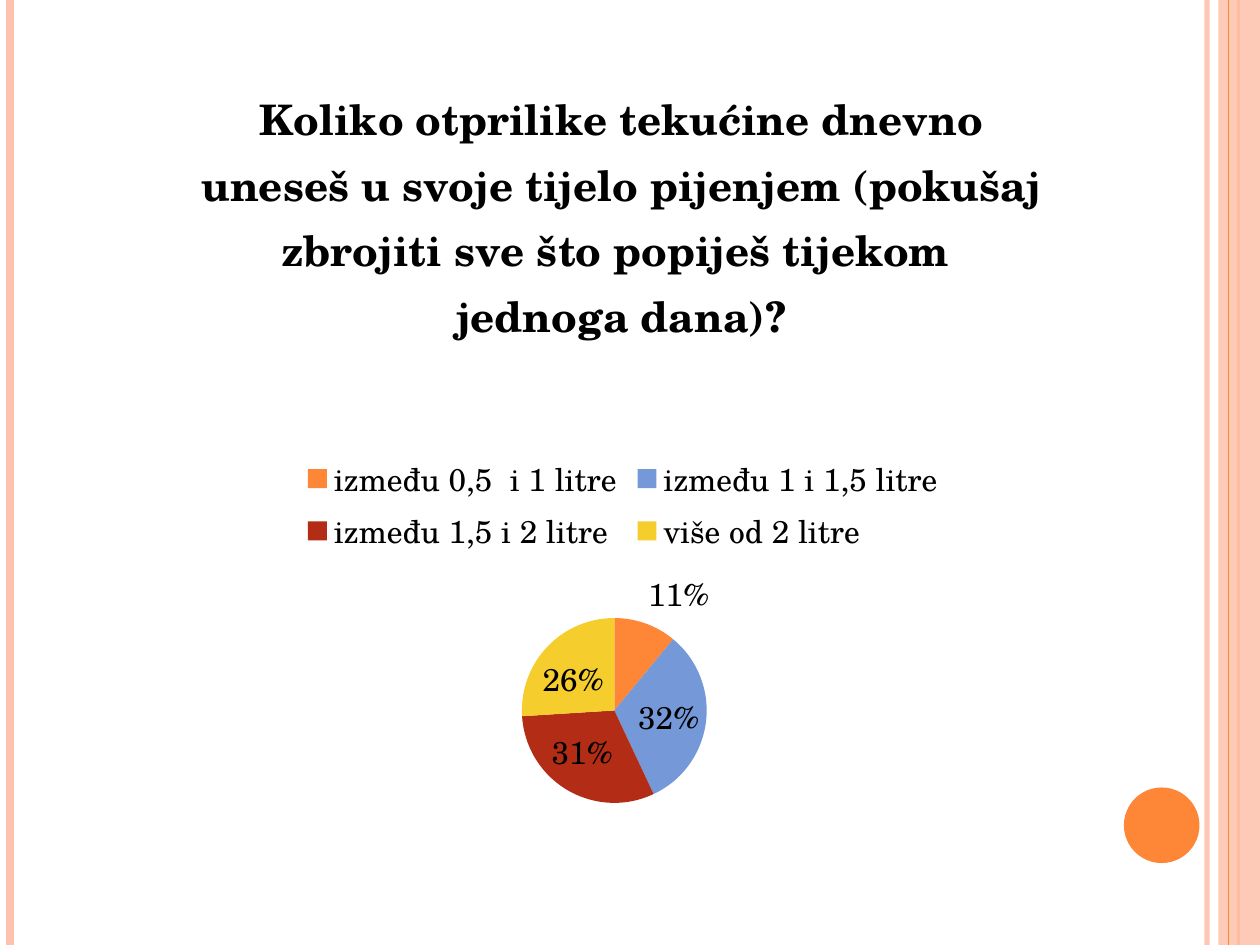
from lxml import etree
from pptx import Presentation
from pptx.chart.data import CategoryChartData
from pptx.dml.color import RGBColor
from pptx.enum.chart import XL_CHART_TYPE, XL_LABEL_POSITION, XL_LEGEND_POSITION
from pptx.enum.shapes import MSO_CONNECTOR, MSO_SHAPE
from pptx.oxml.ns import qn
from pptx.util import Inches, Pt

FONT = "TeX Gyre Schola"
PEACH = "FEC3AE"
ORANGE = "FE8637"
QUESTION = [
    "Koliko otprilike tekućine dnevno uneseš u svoje tijelo pijenjem (pokušaj zbrojiti sve što popiješ tijekom ",
    "jednoga dana)?",
]
ANSWERS = [
    ("između 0,5  i 1 litre", 11, ORANGE),
    ("između 1 i 1,5 litre", 32, "7598D9"),
    ("između 1,5 i 2 litre", 31, "B32C16"),
    ("više od 2 litre", 26, "F5CD2D"),
]


def color(hex_value):
    return RGBColor.from_string(hex_value)


def set_opacity(shape, percent):
    for tint in shape._element.spPr.iter(qn("a:srgbClr")):
        etree.SubElement(tint, qn("a:alpha")).set("val", str(percent * 1000))


def add_stripe(slide, x, top, height, hex_value, weight):
    stripe = slide.shapes.add_connector(
        MSO_CONNECTOR.STRAIGHT, Inches(x), Inches(top), Inches(x), Inches(top + height))
    stripe.line.color.rgb = color(hex_value)
    stripe.line.width = Pt(weight)
    etree.SubElement(stripe._element.spPr, qn("a:effectLst"))
    return stripe


def add_solid(slide, kind, left, top, width, height, hex_value):
    solid = slide.shapes.add_shape(
        kind, Inches(left), Inches(top), Inches(width), Inches(height))
    solid.shadow.inherit = False
    solid.fill.solid()
    solid.fill.fore_color.rgb = color(hex_value)
    solid.line.fill.background()
    return solid


def add_frame(slide, left, top, width, height):
    right = left + width
    set_opacity(add_stripe(slide, right - 0.42, top, height, PEACH, 3), 93)
    add_stripe(slide, left + 0.08, top, height, PEACH, 4.5)
    add_stripe(slide, right - 0.17, top, height, ORANGE, 1.5)
    band = add_solid(slide, MSO_SHAPE.RECTANGLE, right - 0.33, top, 0.33, height, PEACH)
    set_opacity(band, 87)
    add_stripe(slide, right - 0.25, top, height, ORANGE, 0.75)
    add_solid(slide, MSO_SHAPE.OVAL, right - 1.08, top + height - 1.25, 0.6, 0.6, ORANGE)


def style_font(font, size, bold=False):
    font.name = FONT
    font.size = Pt(size)
    font.bold = bold
    font.color.rgb = color("000000")


def place(part, predecessor, settings):
    for layout in part.findall(qn("c:layout")):
        part.remove(layout)
    layout = etree.Element(qn("c:layout"))
    manual = etree.SubElement(layout, qn("c:manualLayout"))
    for tag, value in settings.items():
        etree.SubElement(manual, qn(f"c:{tag}")).set("val", str(value))
    before = part.find(qn(predecessor)) if predecessor else None
    if before is None:
        part.insert(0, layout)
    else:
        before.addnext(layout)


def add_question_title(chart):
    chart.has_title = True
    title = chart.chart_title
    title.include_in_layout = False
    title.text_frame.text = "\n".join(QUESTION)
    for paragraph in title.text_frame.paragraphs:
        style_font(paragraph.font, 24, True)
        for run in paragraph.runs:
            style_font(run.font, 24, True)
    place(title._element, "c:tx", {"xMode": "edge", "yMode": "edge", "x": 0.12, "y": 0.03})


def add_answer_legend(chart):
    chart.has_legend = True
    legend = chart.legend
    legend.position = XL_LEGEND_POSITION.TOP
    legend.include_in_layout = False
    style_font(legend.font, 18)
    place(legend._element, "c:legendPos", {"xMode": "edge", "yMode": "edge", "x": 0.21, "y": 0.49})


def add_intake_pie(slide, left, top, width, height):
    intake = CategoryChartData()
    intake.categories = [answer for answer, _, _ in ANSWERS]
    intake.add_series("".join(QUESTION), [share for _, share, _ in ANSWERS])
    chart = slide.shapes.add_chart(
        XL_CHART_TYPE.PIE, Inches(left), Inches(top), Inches(width), Inches(height), intake).chart
    style_font(chart.font, 18)
    add_question_title(chart)
    add_answer_legend(chart)

    plot = chart.plots[0]
    plot.vary_by_categories = True
    for index, (_, _, hex_value) in enumerate(ANSWERS):
        slice_fill = plot.series[0].points[index].format.fill
        slice_fill.solid()
        slice_fill.fore_color.rgb = color(hex_value)

    labels = plot.series[0].data_labels
    labels.show_percentage = True
    labels.show_value = False
    labels.number_format = "0%"
    labels.number_format_is_linked = False
    labels.position = XL_LABEL_POSITION.BEST_FIT
    style_font(labels.font, 18)
    place(chart._chartSpace.chart.plotArea, None, {
        "layoutTarget": "inner", "xMode": "edge", "yMode": "edge",
        "x": 0.41, "y": 0.7, "w": 0.17, "h": 0.23})


def main():
    deck = Presentation()
    deck.slide_width = Inches(10)
    deck.slide_height = Inches(7.5)
    slide = deck.slides.add_slide(deck.slide_layouts[6])
    add_frame(slide, 0, 0, 10, 7.5)
    add_intake_pie(slide, 0.51, 0.44, 8.82, 6.38)
    deck.save("out.pptx")


if __name__ == "__main__":
    main()
